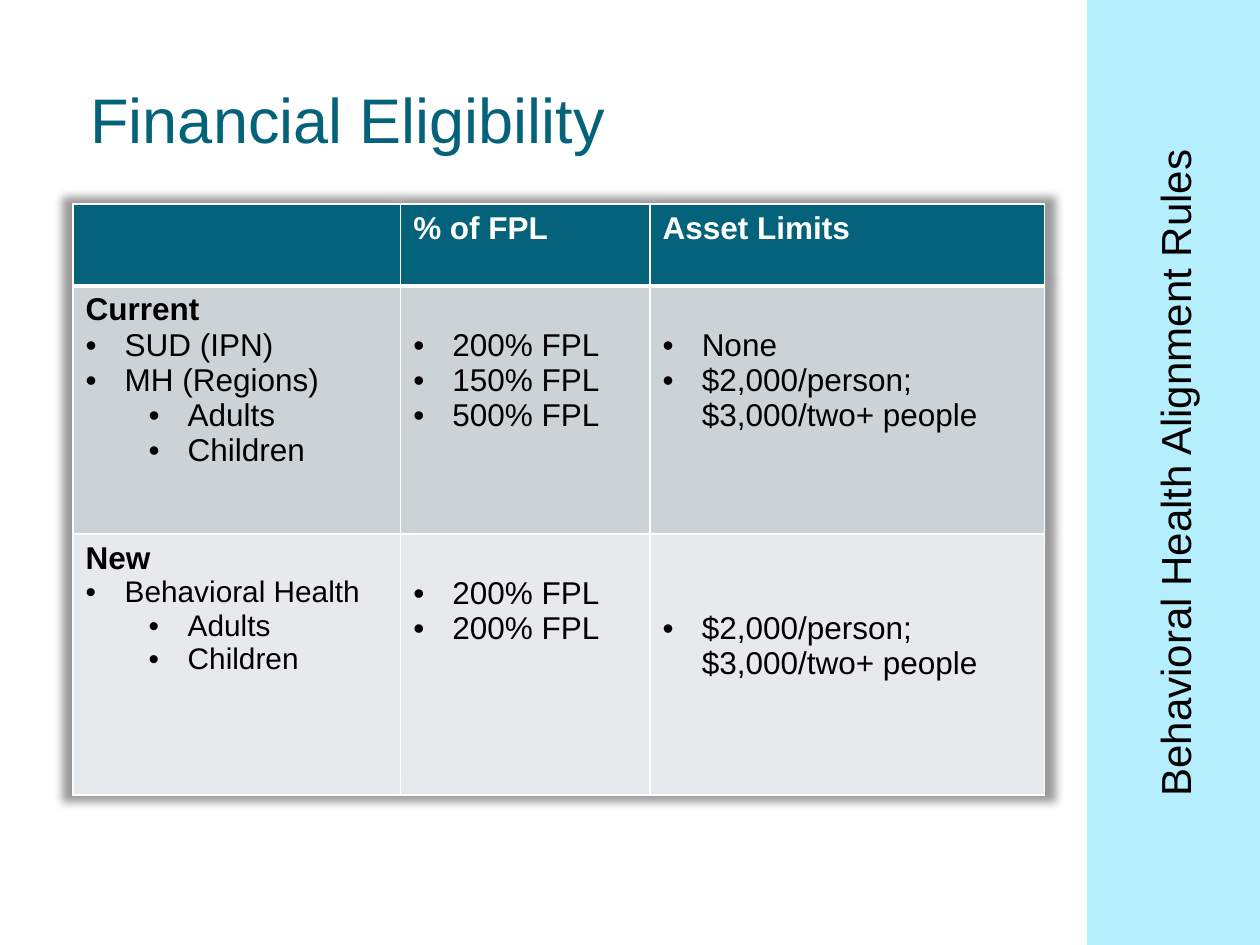
from dataclasses import dataclass
from lxml.etree import SubElement
from pptx import Presentation
from pptx.dml.color import RGBColor
from pptx.enum.shapes import MSO_SHAPE
from pptx.enum.text import MSO_ANCHOR, PP_ALIGN
from pptx.oxml import parse_xml
from pptx.oxml.ns import qn
from pptx.slide import Slide
from pptx.util import Inches, Pt

COLORS = {
    "teal": "04627A",
    "aqua": "B5EEFD",
    "current": "CCD3D7",
    "new": "E7EAEC",
    "white": "FFFFFF",
    "black": "000000",
}
NAMESPACE = "http://schemas.openxmlformats.org/drawingml/2006/main"
TABLE_SHADOW = f"""
<a:effectLst xmlns:a="{NAMESPACE}">
  <a:outerShdw blurRad="63500" sx="102000" sy="102000" algn="ctr" rotWithShape="0">
    <a:srgbClr val="{COLORS['black']}"><a:alpha val="40000"/></a:srgbClr>
  </a:outerShdw>
</a:effectLst>"""
GRID = 0.1
LINE = 0.28
INDENT = 0.31


def color(name):
    return RGBColor.from_string(COLORS[name])


def bullet(para, level):
    para.level = level
    properties = para._p.get_or_add_pPr()
    properties.set("marL", str(Inches(INDENT + 0.5 * level)))
    properties.set("indent", str(-Inches(INDENT)))
    SubElement(properties, qn("a:buFont")).set("typeface", "Arial")
    SubElement(properties, qn("a:buChar")).set("char", "•")


def write(para, text, size=18, bold=False, ink="black", level=None, align=None, spacing=None):
    if level is not None:
        bullet(para, level)
    if align is not None:
        para.alignment = align
    if spacing is not None:
        para.line_spacing = spacing
    span = para.add_run()
    span.text = text
    span.font.name = "Arial"
    span.font.size = Pt(size)
    span.font.bold = bold
    span.font.color.rgb = color(ink)


def border(cell, side, width):
    line = SubElement(cell._tc.get_or_add_tcPr(), qn(f"a:{side}"), w=str(Pt(width)))
    fill = SubElement(line, qn("a:solidFill"))
    SubElement(fill, qn("a:srgbClr"), val=COLORS["white"])


@dataclass
class Page:
    slide: Slide

    def place(self, *cells):
        return [Inches(cell * GRID) for cell in cells]

    def title(self, text, *area):
        box = self.slide.shapes.add_textbox(*self.place(*area))
        frame = box.text_frame
        frame.word_wrap = True
        frame.vertical_anchor = MSO_ANCHOR.MIDDLE
        frame.margin_top = Inches(0.19)
        write(frame.paragraphs[0], text, size=36, ink="teal", spacing=0.9)

    def side_band(self, text, *area):
        band = self.slide.shapes.add_shape(MSO_SHAPE.RECTANGLE, *self.place(*area))
        band.rotation = 270
        band.shadow.inherit = False
        band.fill.solid()
        band.fill.fore_color.rgb = color("aqua")
        band.line.color.rgb = color("aqua")
        band.line.width = Pt(1)
        band.text_frame.word_wrap = True
        band.text_frame.vertical_anchor = MSO_ANCHOR.MIDDLE
        write(band.text_frame.paragraphs[0], text, size=24, align=PP_ALIGN.CENTER)

    def table(self, left, top, columns, rows, fills, contents):
        area = self.place(left, top, sum(columns), sum(rows))
        table = self.slide.shapes.add_table(len(rows), len(columns), *area).table
        table.horz_banding = False
        table._tbl.tblPr.insert(0, parse_xml(TABLE_SHADOW))
        for column, width in zip(table.columns, self.place(*columns)):
            column.width = width
        for row, height in zip(table.rows, self.place(*rows)):
            row.height = height
        for row_number, row in enumerate(contents):
            for column_number, (skipped_lines, entries) in enumerate(row):
                cell = table.cell(row_number, column_number)
                cell.margin_top = Inches(0.05 + skipped_lines * LINE)
                self.fill_cell(cell, entries)
                for side in ("lnL", "lnR", "lnT", "lnB"):
                    header_edge = (row_number, side) in ((0, "lnB"), (1, "lnT"))
                    border(cell, side, 3 if header_edge else 1)
                cell.fill.solid()
                cell.fill.fore_color.rgb = color(fills[row_number])

    def fill_cell(self, cell, entries):
        frame = cell.text_frame
        for number, (text, style) in enumerate(entries):
            para = frame.add_paragraph() if number else frame.paragraphs[0]
            write(para, text, **style)


def main():
    deck = Presentation()
    deck.slide_width, deck.slide_height = Inches(10), Inches(7.5)
    page = Page(deck.slides.add_slide(deck.slide_layouts[6]))

    header = {"bold": True, "ink": "white"}
    heading = {"bold": True}
    item = {"level": 0}
    subitem = {"level": 1}
    small_item = {"level": 0, "size": 17}
    small_subitem = {"level": 1, "size": 17}
    limit = ("$2,000/person; $3,000/two+ people", item)

    page.title("Financial Eligibility", 6.2, 6.2, 86.2, 5.7)
    page.table(
        5.8, 16.2,
        columns=(26, 19.8, 31.3),
        rows=(6.5, 19.7, 20.7),
        fills=("teal", "current", "new"),
        contents=[
            [
                (0, []),
                (0, [("% of FPL", header)]),
                (0, [("Asset Limits", header)]),
            ],
            [
                (0, [("Current", heading), ("SUD (IPN)", item), ("MH (Regions)", item),
                     ("Adults", subitem), ("Children", subitem)]),
                (1, [("200% FPL", item), ("150% FPL", item), ("500% FPL", item)]),
                (1, [("None", item), limit]),
            ],
            [
                (0, [("New", heading), ("Behavioral Health", small_item),
                     ("Adults", small_subitem), ("Children", small_subitem)]),
                (1, [("200% FPL", item), ("200% FPL", item)]),
                (2, [limit]),
            ],
        ],
    )
    page.side_band("Behavioral Health Alignment Rules", 55.7, 30.7, 75, 13.7)
    deck.save("out.pptx")


if __name__ == "__main__":
    main()
